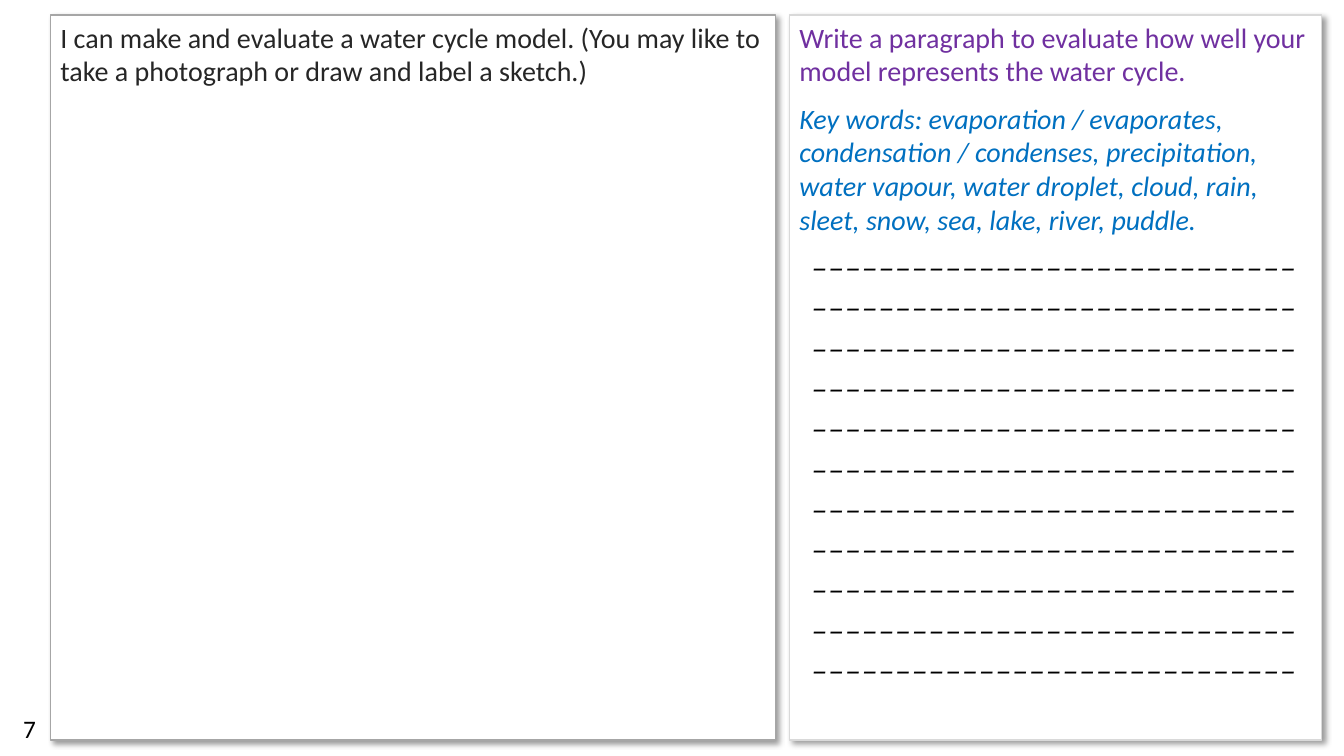
from lxml.etree import SubElement
from pptx import Presentation
from pptx.dml.color import RGBColor
from pptx.enum.shapes import MSO_SHAPE
from pptx.enum.text import MSO_ANCHOR, PP_ALIGN
from pptx.oxml.ns import qn
from pptx.util import Inches, Pt

COLORS = {"white": "FFFFFF", "black": "000000", "dark": "262626", "purple": "7030A0",
          "blue": "0070C0", "grey": "A6A6A6", "pale": "D9D9D9"}
PAGE_NUMBER = "7"
EVALUATION = [
    ("Write a paragraph to evaluate how well your model represents the water cycle.",
     {"color": "purple"}),
    ("Key words: evaporation / evaporates, condensation / condenses, precipitation, "
     "water vapour, water droplet, cloud, rain, sleet, snow, sea, lake, river, puddle.",
     {"color": "blue", "italic": True}),
]
OBJECTIVE = [
    ("I can make and evaluate a water cycle model. (You may like to take a photograph "
     "or draw and label a sketch.)", {"color": "dark"}),
]
PANELS = [  # left, width, border, paragraphs
    (7.83, 5.28, "pale", EVALUATION),
    (0.5, 7.19, "grey", OBJECTIVE),
]
PANEL_TOP, PANEL_HEIGHT = 0.15, 7.19
WRITING_LINES, DASHES_PER_LINE = 11, 29


def rgb(name):
    return RGBColor.from_string(COLORS[name])


def write(paragraph, text, size=20, color="black", italic=False, before=0):
    paragraph.alignment = PP_ALIGN.LEFT
    paragraph.space_before = Pt(before)
    run = paragraph.add_run()
    run.text = text
    font = run.font
    font.name, font.size, font.italic = "Calibri", Pt(size), italic
    font.color.rgb = rgb(color)


def add_soft_shadow(shape):
    shape.shadow.inherit = False
    effects = shape._element.spPr.find(qn("a:effectLst"))
    shadow = SubElement(effects, qn("a:outerShdw"), blurRad=str(Pt(4)), dist=str(Pt(3)),
                        dir=str(45 * 60000), algn="tl", rotWithShape="0")
    color = SubElement(shadow, qn("a:srgbClr"), val=COLORS["black"])
    SubElement(color, qn("a:alpha"), val="40000")


def add_panel(slide, left, width, border, paragraphs):
    panel = slide.shapes.add_shape(MSO_SHAPE.RECTANGLE, Inches(left), Inches(PANEL_TOP),
                                   Inches(width), Inches(PANEL_HEIGHT))
    panel.fill.solid()
    panel.fill.fore_color.rgb = rgb("white")
    panel.line.color.rgb = rgb(border)
    panel.line.width = Pt(1)
    add_soft_shadow(panel)
    frame = panel.text_frame
    frame.word_wrap = True
    frame.vertical_anchor = MSO_ANCHOR.TOP
    for index, (text, style) in enumerate(paragraphs):
        paragraph = frame.add_paragraph() if index else frame.paragraphs[0]
        write(paragraph, text, before=10 if index else 0, **style)


def add_text(slide, left, top, width, height, text, **style):
    box = slide.shapes.add_textbox(Inches(left), Inches(top), Inches(width), Inches(height))
    box.text_frame.word_wrap = True
    write(box.text_frame.paragraphs[0], text, **style)
    return box.text_frame


def main():
    presentation = Presentation()
    presentation.slide_width, presentation.slide_height = Inches(13.33), Inches(7.5)
    slide = presentation.slides.add_slide(presentation.slide_layouts[6])

    number = add_text(slide, 0.13, 7.03, 0.58, 0.4, PAGE_NUMBER, size=18)
    number.vertical_anchor = MSO_ANCHOR.MIDDLE
    for panel in PANELS:
        add_panel(slide, *panel)
    writing = add_text(slide, 8.06, 2.31, 4.86, 4.44, "_" * WRITING_LINES * DASHES_PER_LINE,
                       size=24, italic=True)
    writing.margin_left = writing.margin_right = 0
    writing.margin_top = writing.margin_bottom = 0

    presentation.save("out.pptx")


if __name__ == "__main__":
    main()
